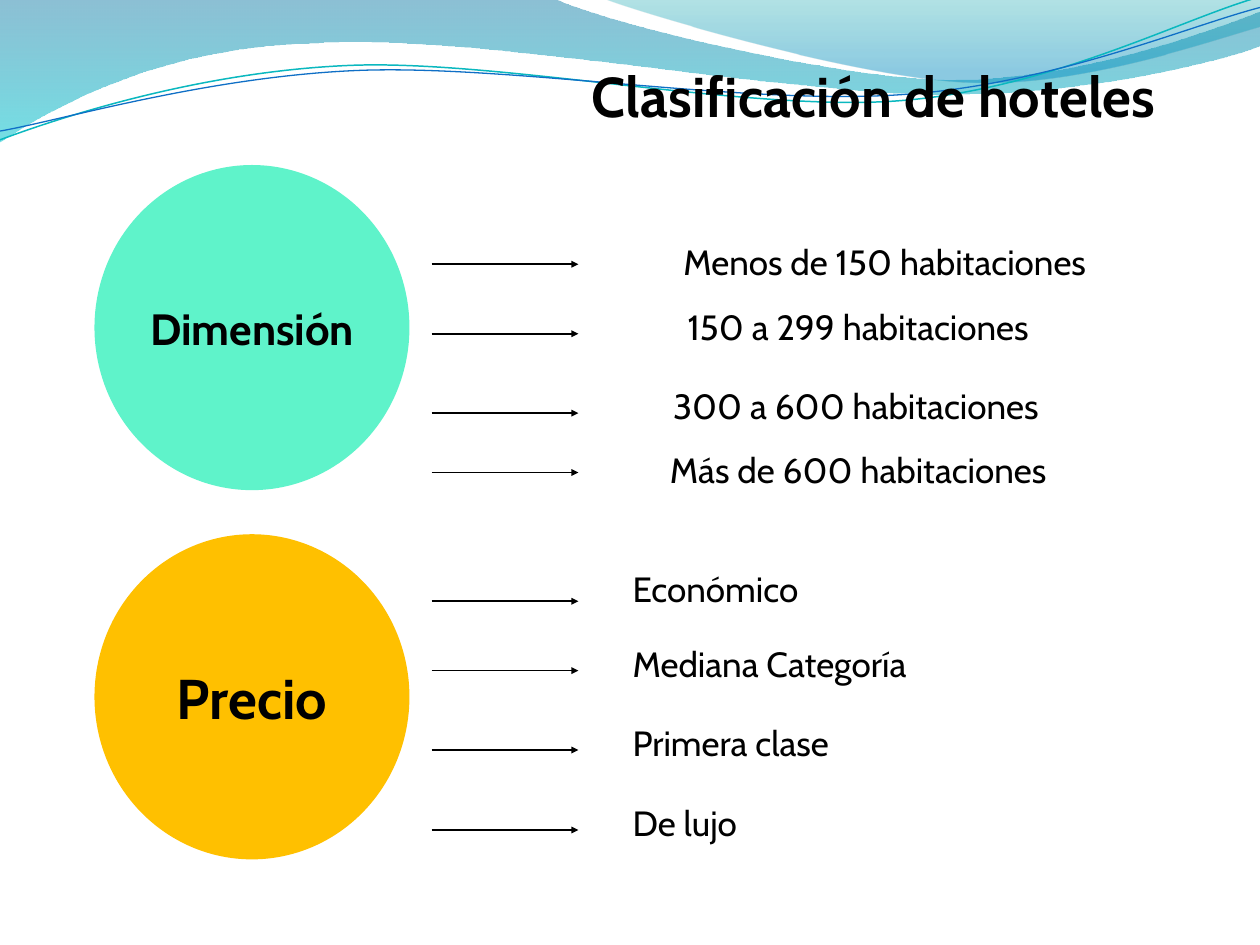
"""Build the hotel classification slide: two categories, each with four arrowed levels."""
from math import cos, radians, sin
from lxml.etree import SubElement
from pptx import Presentation
from pptx.dml.color import RGBColor as RGB
from pptx.enum.shapes import MSO_CONNECTOR as CONNECTOR, MSO_SHAPE as SHAPE
from pptx.enum.text import MSO_ANCHOR as ANCHOR, MSO_AUTO_SIZE as AUTO_SIZE, PP_ALIGN as ALIGN
from pptx.oxml.ns import qn
from pptx.util import Pt

TITLE = ("Clasificación de hoteles", (292.3, 31.7, 414, 45.4))
CATEGORIES = [
    {"name": "Dimensión", "size": "category", "fill": "mint", "top": 94.3, "align": ALIGN.CENTER,
     "levels": [("Menos de 150 habitaciones", 151, (342.9, 133.9, 325.4)),
                ("150 a 299 habitaciones", 190.7, (331.7, 170.9, 317.5)),
                ("300 a 600 habitaciones", 236.1, (329.3, 216, 319.7)),
                ("Más de 600 habitaciones", 270, (331.7, 252.7, 317.5))]},
    {"name": "Precio", "size": "title", "fill": "amber", "top": 305.3, "align": ALIGN.LEFT,
     "levels": [("Económico", 343.6, (354.4, 320.9, 151.2)),
                ("Mediana Categoría", 383.2, (354.4, 363.6, 221)),
                ("Primera clase", 428.6, (354.4, 409, 181.4)),
                ("De lujo", 474.3, (354.4, 454.3, 181.4))]},
]
THEME = {
    "font": "Cabin",
    "sizes": {"title": 32, "category": 25, "level": 20},
    "colors": {"text": "000000", "mint": "5FF3CA", "amber": "FFC000",
               "teal": "0AB8BF", "blue": "0F6FC6"},
}
WAVE_BANDS = [
    {"start": (0, 0),
     "segments": [[(316.8, -0.7)],
                  [(342.7, 12.2), (478.1, 45.4), (545.8, 45.4)],
                  [(614.2, 45.4), (689.8, 18.7), (720, 6.5)],
                  [(720.7, 25.9)],
                  [(707.8, 31.7), (626.4, 54.7), (537.1, 54)],
                  [(447.8, 54), (275, 20.2), (185, 24.5)],
                  [(92.9, 25.9), (33.1, 59.8), (-0.7, 81.4)],
                  [(0, 0)]],
     "stops": [(0, "0074A1", 45), (1, "00C6CF", 55)]},
    {"start": (344.9, -0.7),
     "segments": [[(366.5, 7.9), (491, 44.6), (553.7, 46.8)],
                  [(616.3, 49.7), (691.9, 23), (720, 15.1)],
                  [(720, 0)],
                  [(344.9, -0.7)]],
     "stops": [(0, "00A1A9", 30), (0.8, "008BBF", 45)]},
]
WAVE_LINES = [
    {"start": (0, 79.9), "color": "teal", "width": 0.85, "center": (359.3, 41.4),
     "segments": [[(34.6, 67), (113.8, 41), (199.4, 37.4)],
                  [(284.4, 33.8), (427, 64.1), (513.4, 57.6)],
                  [(599.8, 51.1), (675.4, 10.8), (718.6, -1.4)]]},
    {"start": (0, 74.9), "color": "blue", "width": 0.75, "center": (359.6, 42.5),
     "segments": [[(33.8, 69.1), (118.1, 43.9), (203.8, 40.3)],
                  [(290.2, 36.7), (427, 60.5), (516.2, 54)],
                  [(601.9, 48.2), (678.2, 15.1), (720, 4.3)]]},
]
WAVE_TILT = 2.7
CIRCLE_LEFT, CIRCLE_WIDTH, CIRCLE_HEIGHT = 54, 180, 185.8
ARROW_START, ARROW_END = 246.7, 330.5
LEVEL_HEIGHT = 31


def color(name):
    return RGB.from_string(THEME["colors"][name])


def set_values(target, values):
    for name, value in values.items():
        setattr(target, name, value)


def box(*lengths):
    return [Pt(length) for length in lengths]


def write(shape, text, size, align=ALIGN.CENTER, bold=False, **frame_format):
    frame = shape.text_frame
    set_values(frame, frame_format)
    paragraph = frame.paragraphs[0]
    set_values(paragraph, {"alignment": align, "space_before": Pt(0)})
    run = paragraph.add_run()
    run.text = text
    set_values(run.font, {"name": THEME["font"], "size": Pt(THEME["sizes"][size]), "bold": bold})
    run.font.color.rgb = color("text")


def turn(point, center, degrees):
    x, y = point[0] - center[0], point[1] - center[1]
    cosine, sine = cos(radians(degrees)), sin(radians(degrees))
    return center[0] + x * cosine - y * sine, center[1] + x * sine + y * cosine


def add_wave(slide, wave, close=False, tilt=0):
    """Draw a freeform, joining each three-point segment into one cubic curve."""
    center = wave.get("center", (0, 0))
    points = [wave["start"], *(point for segment in wave["segments"] for point in segment)]
    first, *rest = [box(*turn(point, center, tilt)) for point in points]
    builder = slide.shapes.build_freeform(*first)
    builder.add_line_segments(rest, close=close)
    shape = builder.convert_to_shape()
    set_values(shape, {"rotation": -tilt % 360})
    shape.shadow.inherit = False
    outline = next(shape.element.iter(qn("a:path")))
    steps = iter(outline.findall(qn("a:lnTo")))
    for segment in wave["segments"]:
        parts = [next(steps) for _ in segment]
        if len(parts) == 3:
            curve = SubElement(outline, qn("a:cubicBezTo"))
            parts[0].addprevious(curve)
            for part in parts:
                curve.append(part[0])
                outline.remove(part)
    return shape


def add_wave_band(slide, wave):
    shape = add_wave(slide, wave, close=True)
    shape.line.fill.background()
    shape.fill.gradient()
    shape.fill.gradient_angle = 270
    for stop, (position, rgb, _) in zip(shape.fill.gradient_stops, wave["stops"]):
        stop.position = position
        stop.color.rgb = RGB.from_string(rgb)
    for element, (_, _, opacity) in zip(shape.element.iter(qn("a:srgbClr")), wave["stops"]):
        SubElement(element, qn("a:alpha"), val=str(opacity * 1000))


def add_wave_line(slide, wave):
    shape = add_wave(slide, wave, tilt=WAVE_TILT)
    shape.fill.background()
    shape.line.color.rgb = color(wave["color"])
    shape.line.width = Pt(wave["width"])


def add_arrow(slide, y):
    arrow = slide.shapes.add_connector(
        CONNECTOR.STRAIGHT, *box(ARROW_START, y, ARROW_END, y))
    arrow.line.color.rgb = color("text")
    arrow.line.width = Pt(1)
    properties = arrow.element.spPr
    SubElement(properties.find(qn("a:ln")), qn("a:tailEnd"), type="triangle", w="sm", len="sm")
    SubElement(properties, qn("a:effectLst"))


def add_category(slide, category):
    circle = slide.shapes.add_shape(
        SHAPE.OVAL, *box(CIRCLE_LEFT, category["top"], CIRCLE_WIDTH, CIRCLE_HEIGHT))
    circle.shadow.inherit = False
    circle.fill.solid()
    circle.fill.fore_color.rgb = color(category["fill"])
    circle.line.fill.background()
    write(circle, category["name"], category["size"], bold=True,
          word_wrap=False, vertical_anchor=ANCHOR.MIDDLE)
    for text, arrow_y, (left, top, width) in category["levels"]:
        add_arrow(slide, arrow_y)
        label = slide.shapes.add_textbox(*box(left, top, width, LEVEL_HEIGHT))
        write(label, text, "level", category["align"],
              word_wrap=True, auto_size=AUTO_SIZE.SHAPE_TO_FIT_TEXT)


def add_title(slide):
    text, position = TITLE
    title = slide.shapes.title
    set_values(title, dict(zip(("left", "top", "width", "height"), box(*position))))
    write(title, text, "title", bold=True, word_wrap=True,
          vertical_anchor=ANCHOR.TOP, auto_size=AUTO_SIZE.SHAPE_TO_FIT_TEXT)
    slide.shapes.element.append(title.element)


def main():
    presentation = Presentation()
    set_values(presentation, {"slide_width": Pt(720), "slide_height": Pt(540)})
    slide = presentation.slides.add_slide(presentation.slide_layouts[5])
    for wave in WAVE_BANDS:
        add_wave_band(slide, wave)
    for wave in WAVE_LINES:
        add_wave_line(slide, wave)
    add_title(slide)
    for category in CATEGORIES:
        add_category(slide, category)
    presentation.save("out.pptx")


if __name__ == "__main__":
    main()
